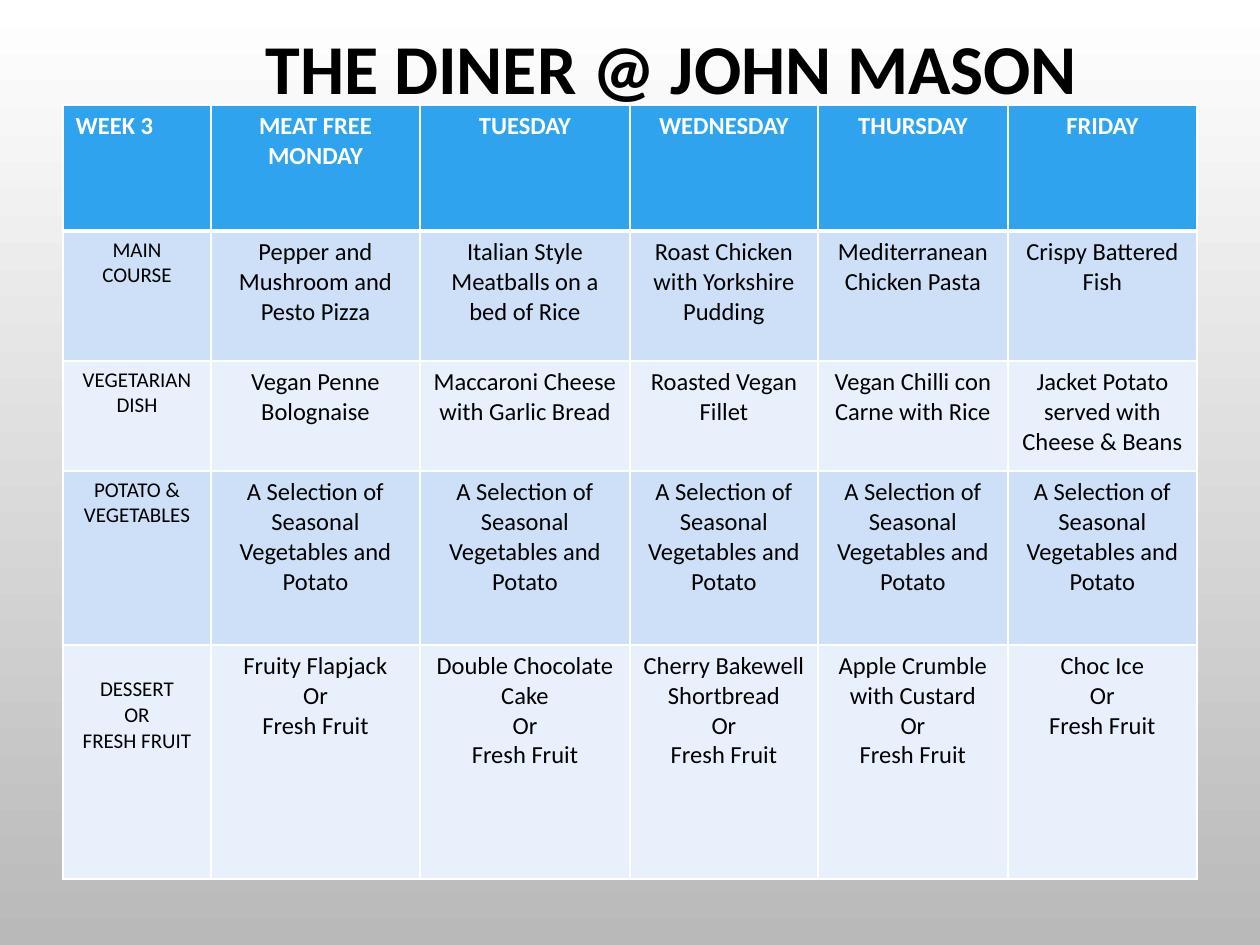
from lxml.etree import SubElement
from pptx import Presentation
from pptx.dml.color import RGBColor
from pptx.enum.text import MSO_ANCHOR, MSO_AUTO_SIZE, PP_ALIGN
from pptx.oxml.ns import qn
from pptx.util import Pt

TITLE = "THE DINER @ JOHN MASON"
HEAD = ["WEEK 3", "MEAT FREE MONDAY", "TUESDAY", "WEDNESDAY", "THURSDAY", "FRIDAY"]
SIDES = ["A Selection of Seasonal Vegetables and Potato"] * 5
SWEETS = ["Fruity Flapjack", "Double Chocolate Cake", "Cherry Bakewell Shortbread",
          "Apple Crumble with Custard", "Choc Ice"]
MENU = [
    HEAD,
    ["MAIN\nCOURSE", "Pepper and Mushroom and Pesto Pizza",
     "Italian Style Meatballs on a bed of Rice", "Roast Chicken with Yorkshire Pudding",
     "Mediterranean Chicken Pasta", "Crispy Battered Fish"],
    ["VEGETARIAN DISH", "Vegan Penne Bolognaise", "Maccaroni Cheese with Garlic Bread",
     "Roasted Vegan Fillet", "Vegan Chilli con Carne with Rice",
     "Jacket Potato served with Cheese & Beans"],
    ["POTATO & VEGETABLES", *SIDES],
    ["DESSERT\nOR\nFRESH FRUIT", *[f"{sweet}\nOr\nFresh Fruit" for sweet in SWEETS]],
]
THEME = {
    "font": "Calibri", "title": 40, "body": 14, "label": 12,
    "ink": "000000", "white": "FFFFFF", "grey": "B9B9B9",
    "head": "2FA3EE", "bands": ["E8F0FC", "CDE0F8"],
}
PAGE = (1260, 945)
TITLE_BOX = (136, 32, 1071, 84)
GRID = (63, 105)
COLS = [148, 209, 210, 188, 190, 189]
ROWS = [126, 130, 110, 174, 234]
DROP = 32
SCALE = 914400 / 126


def px(num):
    return round(num * SCALE)


def color(name):
    return RGBColor.from_string(THEME.get(name, name))


def style(para, size, ink, bold, align=PP_ALIGN.CENTER):
    para.alignment = align
    font = para.font
    font.name, font.size, font.bold = THEME["font"], Pt(THEME[size]), bold
    font.color.rgb = color(ink)


def border(cell, base):
    props = cell._tc.get_or_add_tcPr()
    for side, width in (("L", 1), ("R", 1), ("T", 1), ("B", base)):
        line = SubElement(props, qn(f"a:ln{side}"), w=str(Pt(width)))
        fill = SubElement(line, qn("a:solidFill"))
        SubElement(fill, qn("a:srgbClr"), val=THEME["white"])


def fill_cell(cell, text, row, col):
    top = row == 0
    border(cell, 3 if top else 1)
    cell.fill.solid()
    cell.fill.fore_color.rgb = color("head" if top else THEME["bands"][row % 2])
    cell.text = text
    size = "label" if col == 0 and not top else "body"
    align = PP_ALIGN.LEFT if top and col == 0 else PP_ALIGN.CENTER
    for para in cell.text_frame.paragraphs:
        style(para, size, "white" if top else "ink", top, align)


def add_title(slide):
    title = slide.shapes.title
    title.left, title.top, title.width, title.height = map(px, TITLE_BOX)
    frame = title.text_frame
    frame.text = TITLE
    frame.auto_size = MSO_AUTO_SIZE.NONE
    frame.vertical_anchor = MSO_ANCHOR.BOTTOM
    para = frame.paragraphs[0]
    para.line_spacing = 0.9
    style(para, "title", "ink", True)


def add_menu(slide):
    box = map(px, (*GRID, sum(COLS), sum(ROWS)))
    table = slide.shapes.add_table(len(ROWS), len(COLS), *box).table
    for col, width in zip(table.columns, COLS):
        col.width = px(width)
    for row, height in zip(table.rows, ROWS):
        row.height = px(height)
    for row, line in enumerate(MENU):
        for col, text in enumerate(line):
            fill_cell(table.cell(row, col), text, row, col)
    table.cell(len(ROWS) - 1, 0).margin_top = px(DROP)


def main():
    deck = Presentation()
    deck.slide_width, deck.slide_height = map(px, PAGE)
    slide = deck.slides.add_slide(deck.slide_layouts.get_by_name("Title Only"))
    fill = slide.background.fill
    fill.gradient()
    fill.gradient_angle = 270
    for stop, name in zip(fill.gradient_stops, ("white", "grey")):
        stop.color.rgb = color(name)
    add_title(slide)
    add_menu(slide)
    deck.save("out.pptx")


if __name__ == "__main__":
    main()
